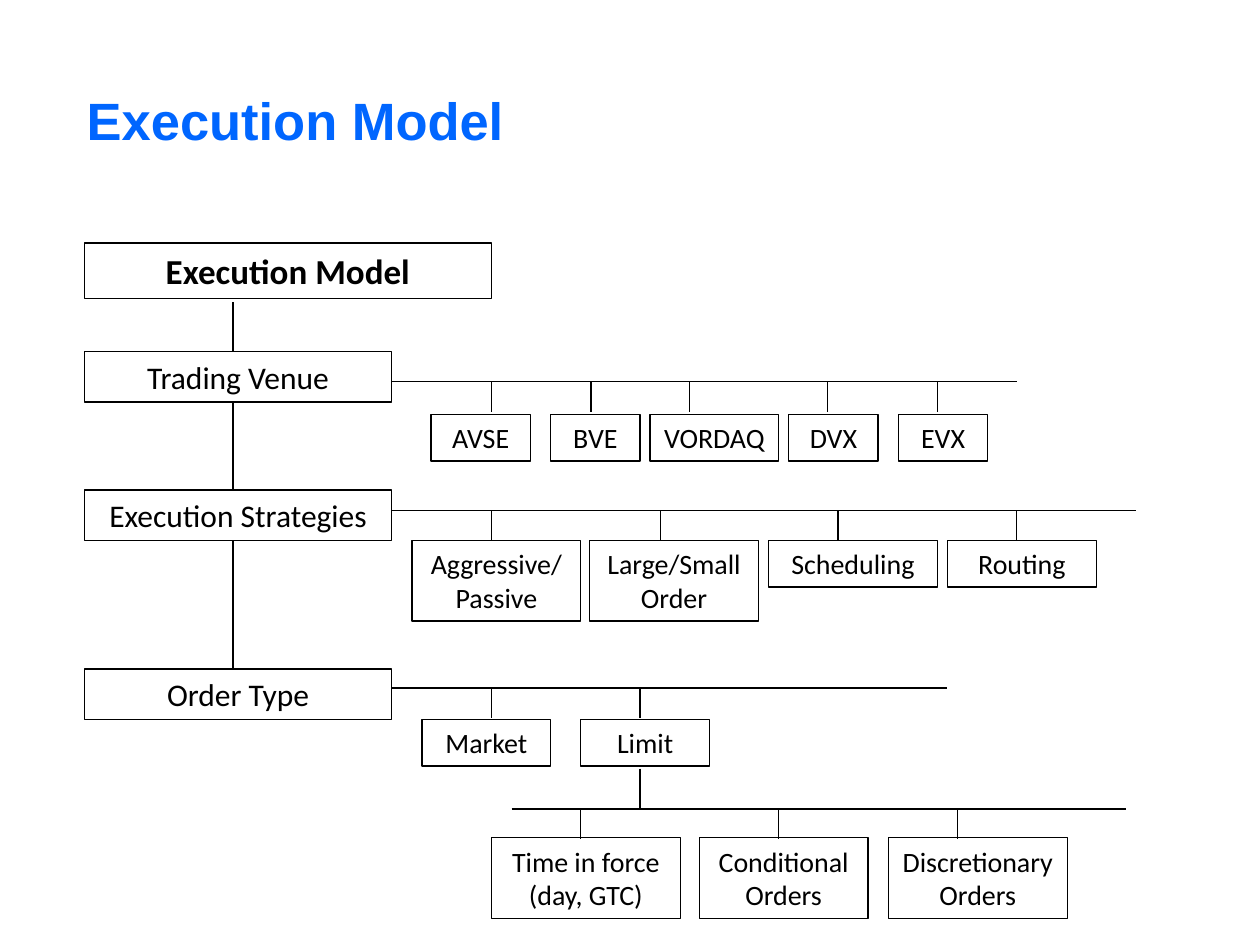
from lxml.etree import SubElement
from pptx import Presentation
from pptx.dml.color import RGBColor
from pptx.enum.shapes import MSO_CONNECTOR, MSO_SHAPE
from pptx.enum.text import MSO_ANCHOR, MSO_AUTO_SIZE, PP_ALIGN
from pptx.oxml.ns import qn
from pptx.util import Inches, Pt

BLACK = RGBColor(0x00, 0x00, 0x00)
BLUE = RGBColor(0x00, 0x66, 0xFF)

LEFT = 0.67
SPINE = 1.85
CATEGORY_WIDTH = 2.44
CATEGORY_HEIGHT = 0.4
BRANCH_START = LEFT + CATEGORY_WIDTH
ONE_LINE = 0.37
TWO_LINES = 0.64
DROP = 0.24

CATEGORIES = [("Trading Venue", 2.79), ("Execution Strategies", 3.89), ("Order Type", 5.31)]

# Each branch: start, end, rail height, top of boxes, box height and items.
BRANCHES = [
    (BRANCH_START, 8.07, 3.03, 3.29, [
        ("AVSE", 3.42, 0.79, ONE_LINE, 3.9),
        ("BVE", 4.37, 0.71, ONE_LINE, 4.69),
        ("VORDAQ", 5.16, 1.02, ONE_LINE, 5.47),
        ("DVX", 6.26, 0.71, ONE_LINE, 6.57),
        ("EVX", 7.13, 0.71, ONE_LINE, 7.44),
    ]),
    (BRANCH_START, 9.02, 4.05, 4.29, [
        ("Aggressive/Passive", 3.27, 1.34, TWO_LINES, 3.9),
        ("Large/Small Order", 4.68, 1.34, TWO_LINES, 5.24),
        ("Scheduling", 6.1, 1.34, ONE_LINE, 6.65),
        ("Routing", 7.52, 1.18, ONE_LINE, 8.07),
    ]),
    (BRANCH_START, 7.52, 5.46, 5.71, [
        ("Market", 3.35, 1.02, ONE_LINE, 3.9),
        ("Limit", 4.61, 1.02, ONE_LINE, 5.08),
    ]),
    (4.06, 8.94, 6.42, 6.65, [
        ("Time in force (day, GTC)", 3.9, 1.5, TWO_LINES, 4.61),
        ("Conditional Orders", 5.55, 1.34, TWO_LINES, 6.18),
        ("Discretionary Orders", 7.05, 1.42, TWO_LINES, 7.6),
    ]),
]


def add_span(paragraph, text, font, size, color, bold=False):
    span = paragraph.add_run()
    span.text = text
    span.font.name = font
    span.font.size = Pt(size)
    span.font.bold = bold
    span.font.color.rgb = color


def add_title(page, text):
    box = page.shapes.add_textbox(Inches(0.59), Inches(0.6), Inches(9), Inches(0.69))
    frame = box.text_frame
    frame.word_wrap = True
    frame.vertical_anchor = MSO_ANCHOR.MIDDLE
    add_span(frame.paragraphs[0], text, "Arial", 30, BLUE, bold=True)


def add_box(page, text, left, top, width, height, size, bold=False):
    box = page.shapes.add_shape(
        MSO_SHAPE.RECTANGLE, Inches(left), Inches(top), Inches(width), Inches(height))
    box.shadow.inherit = False
    box.fill.background()
    box.line.color.rgb = BLACK
    box.line.width = Pt(0.75)
    frame = box.text_frame
    frame.word_wrap = True
    frame.auto_size = MSO_AUTO_SIZE.SHAPE_TO_FIT_TEXT
    frame.vertical_anchor = MSO_ANCHOR.TOP
    paragraph = frame.paragraphs[0]
    paragraph.alignment = PP_ALIGN.CENTER
    add_span(paragraph, text, "Calibri", size, BLACK, bold)


def add_line(page, start_x, start_y, end_x, end_y):
    line = page.shapes.add_connector(
        MSO_CONNECTOR.STRAIGHT,
        Inches(start_x), Inches(start_y), Inches(end_x), Inches(end_y))
    line.line.color.rgb = BLACK
    line.line.width = Pt(0.75)
    SubElement(line._element.spPr, qn("a:effectLst"))


def add_trunk(page):
    add_box(page, "Execution Model", LEFT, 1.93, 3.23, 0.44, 20, bold=True)
    previous_bottom = 2.4
    for text, top in CATEGORIES:
        add_line(page, SPINE, previous_bottom, SPINE, top)
        add_box(page, text, LEFT, top, CATEGORY_WIDTH, CATEGORY_HEIGHT, 18)
        previous_bottom = top + CATEGORY_HEIGHT


def add_branch(page, start, end, rail, top, items):
    add_line(page, start, rail, end, rail)
    for text, left, width, height, stem in items:
        add_line(page, stem, rail, stem, rail + DROP)
        add_box(page, text, left, top, width, height, 16)


def main():
    deck = Presentation()
    deck.slide_width = Inches(10)
    deck.slide_height = Inches(7.5)
    page = deck.slides.add_slide(deck.slide_layouts[6])
    add_title(page, "Execution Model")
    add_trunk(page)
    for branch in BRANCHES:
        add_branch(page, *branch)
    add_line(page, 5.08, 6.1, 5.08, 6.42)
    deck.save("out.pptx")


if __name__ == "__main__":
    main()
